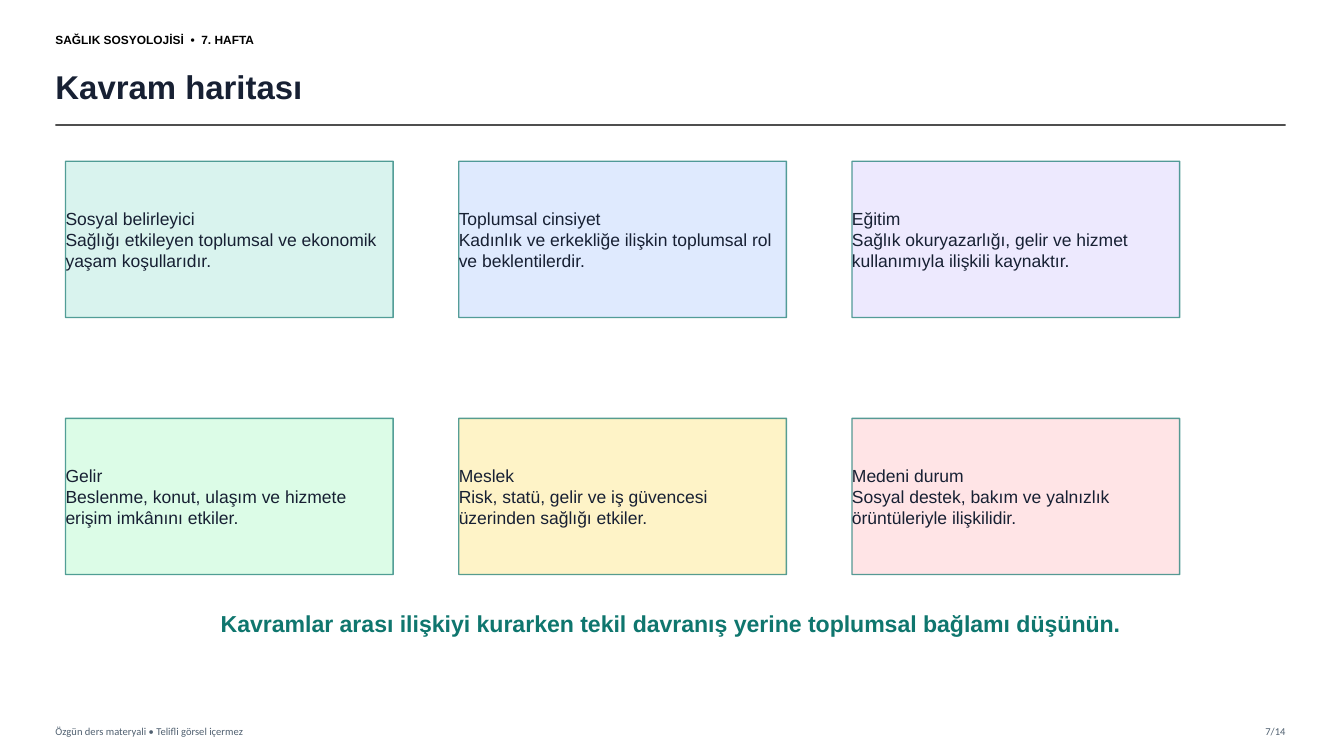
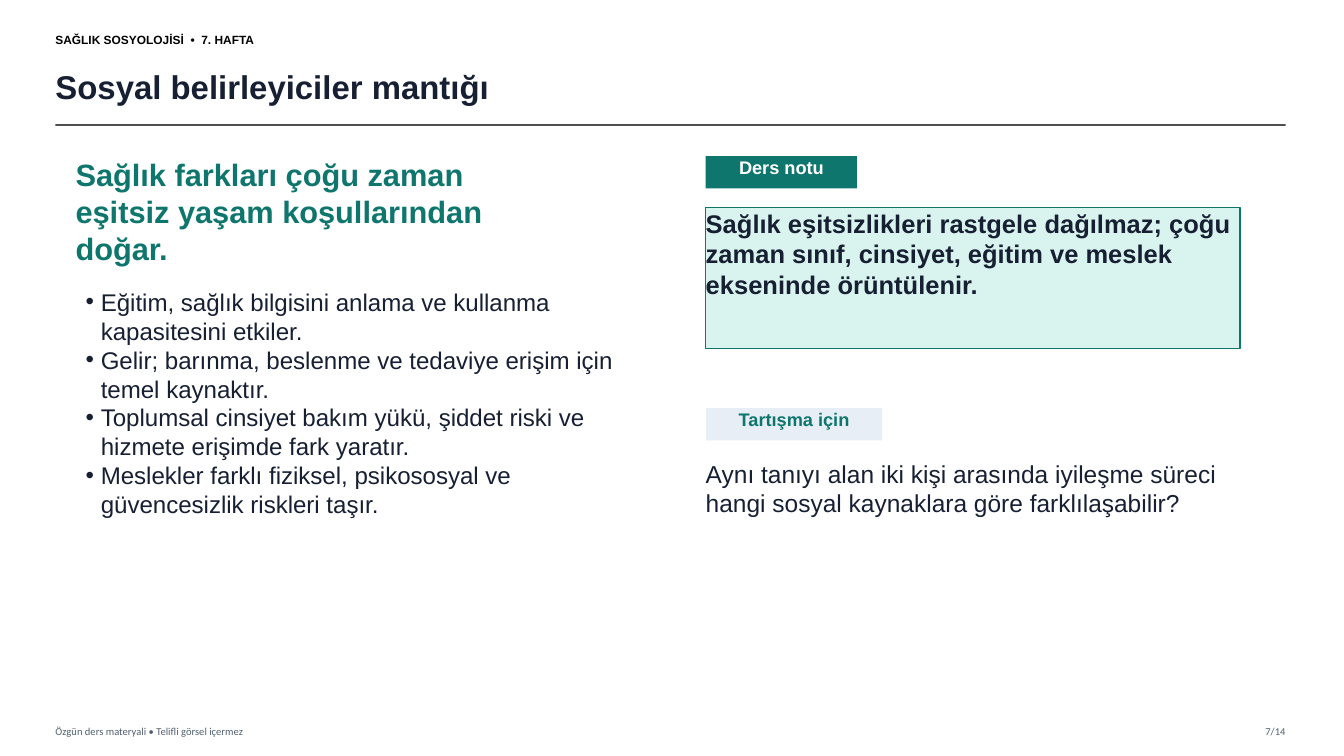
from lxml.etree import SubElement
from pptx import Presentation
from pptx.dml.color import RGBColor
from pptx.enum.shapes import MSO_CONNECTOR, MSO_SHAPE
from pptx.enum.text import MSO_ANCHOR as Anchor, PP_ALIGN as Align
from pptx.oxml.ns import qn
from pptx.util import Emu, Pt

PX = 9144  # 100 px to the inch
COLORS = {
    "ink": "172033", "black": "000000", "white": "FFFFFF", "teal": "0F766E",
    "rule": "333333", "footer": "506070", "mint": "D9F3EE", "blue": "DFEAFE",
    "violet": "EDE9FE", "green": "DCFCE7", "yellow": "FEF3C7", "rose": "FFE4E6",
    "mist": "E8EEF5",
}

COURSE = "SAĞLIK SOSYOLOJİSİ  •  7. HAFTA"
FOOTER = "Özgün ders materyali • Telifli görsel içermez"
PAGE = "7/14"

MAP_TITLE = "Kavram haritası"
CONCEPTS = [
    ("Sosyal belirleyici", "Sağlığı etkileyen toplumsal ve ekonomik yaşam koşullarıdır.", "mint"),
    ("Toplumsal cinsiyet", "Kadınlık ve erkekliğe ilişkin toplumsal rol ve beklentilerdir.", "blue"),
    ("Eğitim", "Sağlık okuryazarlığı, gelir ve hizmet kullanımıyla ilişkili kaynaktır.", "violet"),
    ("Gelir", "Beslenme, konut, ulaşım ve hizmete erişim imkânını etkiler.", "green"),
    ("Meslek", "Risk, statü, gelir ve iş güvencesi üzerinden sağlığı etkiler.", "yellow"),
    ("Medeni durum", "Sosyal destek, bakım ve yalnızlık örüntüleriyle ilişkilidir.", "rose"),
]
MAP_MESSAGE = "Kavramlar arası ilişkiyi kurarken tekil davranış yerine toplumsal bağlamı düşünün."

LOGIC_TITLE = "Sosyal belirleyiciler mantığı"
LOGIC_MESSAGE = "Sağlık farkları çoğu zaman eşitsiz yaşam koşullarından doğar."
LOGIC_POINTS = [
    "Eğitim, sağlık bilgisini anlama ve kullanma kapasitesini etkiler.",
    "Gelir; barınma, beslenme ve tedaviye erişim için temel kaynaktır.",
    "Toplumsal cinsiyet bakım yükü, şiddet riski ve hizmete erişimde fark yaratır.",
    "Meslekler farklı fiziksel, psikososyal ve güvencesizlik riskleri taşır.",
]
NOTE_LABEL = "Ders notu"
NOTE = ("Sağlık eşitsizlikleri rastgele dağılmaz; çoğu zaman sınıf, cinsiyet, "
        "eğitim ve meslek ekseninde örüntülenir.")
DISCUSSION_LABEL = "Tartışma için"
DISCUSSION = ("Aynı tanıyı alan iki kişi arasında iyileşme süreci hangi sosyal "
              "kaynaklara göre farklılaşabilir?")

LEFT, RIGHT = 55, 1275
CARD_COLUMNS, CARD_WIDTH, CARD_HEIGHT = 3, 325, 155
CARD_LEFT, CARD_TOP, CARD_STEP_X, CARD_STEP_Y = 65, 160, 390, 255
SIDE_LEFT, SIDE_WIDTH, LABEL_HEIGHT = 700, 530, 32
BULLET_INDENT = 15


def px(value):
    return Emu(value * PX)


def color(name):
    return RGBColor.from_string(COLORS[name])


def style_line(line, name, width, opacity=100):
    line.color.rgb = color(name)
    line.width = Pt(width)
    if opacity < 100:
        fill = line.fill._xPr.find(qn("a:solidFill"))
        SubElement(fill[0], qn("a:alpha"), val=str(opacity * 1000))


def add_bullet(paragraph):
    properties = paragraph._p.get_or_add_pPr()
    properties.set("marL", str(px(BULLET_INDENT)))
    properties.set("indent", str(-px(BULLET_INDENT)))
    SubElement(properties, qn("a:buFont"), typeface="Arial")
    SubElement(properties, qn("a:buChar"), char="•")


def write(shape, lines, size, ink="ink", bold=False, align=Align.LEFT,
          anchor=Anchor.TOP, font="Arial", bullets=False):
    frame = shape.text_frame
    frame.word_wrap = True
    frame.vertical_anchor = anchor
    frame.margin_left = frame.margin_top = frame.margin_right = frame.margin_bottom = 0
    for index, line in enumerate(lines):
        paragraph = frame.add_paragraph() if index else frame.paragraphs[0]
        paragraph.alignment = align
        if bullets:
            add_bullet(paragraph)
        run = paragraph.add_run()
        run.text = line
        run.font.name = font
        run.font.size = Pt(size)
        run.font.bold = bold
        run.font.color.rgb = color(ink)


def add_text(slide, box, *lines, **style):
    write(slide.shapes.add_textbox(*map(px, box)), lines, **style)


def add_panel(slide, box, fill, *lines, border_opacity=0, **style):
    """Add a filled rectangle with text; opacity 0 means no border."""
    panel = slide.shapes.add_shape(MSO_SHAPE.RECTANGLE, *map(px, box))
    panel.shadow.inherit = False
    panel.fill.solid()
    panel.fill.fore_color.rgb = color(fill)
    if border_opacity:
        style_line(panel.line, "teal", 1, border_opacity)
    else:
        panel.line.fill.background()
    write(panel, lines, **style)


def add_lesson_slide(presentation, title):
    """Add a blank slide with the shared header, rule and footer."""
    slide = presentation.slides.add_slide(presentation.slide_layouts[6])
    add_text(slide, (LEFT, 25, 360, 28), COURSE, size=8.5, ink="black", bold=True,
             anchor=Anchor.MIDDLE)
    add_text(slide, (LEFT, 58, 1195, 55), title, size=23.5, bold=True, anchor=Anchor.MIDDLE)
    rule = slide.shapes.add_connector(MSO_CONNECTOR.STRAIGHT, *map(px, (LEFT, 124, RIGHT, 124)))
    style_line(rule.line, "rule", 1.2, 85)
    SubElement(rule._element.spPr, qn("a:effectLst"))
    footer = {"size": 7.5, "ink": "footer", "font": "Calibri", "anchor": Anchor.MIDDLE}
    add_text(slide, (LEFT, 714, 600, 22), FOOTER, **footer)
    add_text(slide, (RIGHT - 65, 714, 65, 22), PAGE, align=Align.RIGHT, **footer)
    return slide


def build_concept_map(presentation):
    slide = add_lesson_slide(presentation, MAP_TITLE)
    for index, (name, meaning, fill) in enumerate(CONCEPTS):
        row, column = divmod(index, CARD_COLUMNS)
        box = (CARD_LEFT + column * CARD_STEP_X, CARD_TOP + row * CARD_STEP_Y,
               CARD_WIDTH, CARD_HEIGHT)
        add_panel(slide, box, fill, name, meaning, border_opacity=70, size=12.5,
                  anchor=Anchor.MIDDLE)
    add_text(slide, (100, 605, 1130, 45), MAP_MESSAGE, size=16.5, ink="teal", bold=True,
             align=Align.CENTER)


def build_logic(presentation):
    slide = add_lesson_slide(presentation, LOGIC_TITLE)
    add_text(slide, (75, 155, 460, 100), LOGIC_MESSAGE, size=22, ink="teal", bold=True)
    add_text(slide, (85, 285, 525, 270), *LOGIC_POINTS, size=17.2, bullets=True)
    label = {"size": 13, "bold": True, "align": Align.CENTER}
    add_panel(slide, (SIDE_LEFT, 155, 150, LABEL_HEIGHT), "teal", NOTE_LABEL,
              ink="white", **label)
    add_panel(slide, (SIDE_LEFT, 206, SIDE_WIDTH, 140), "mint", NOTE,
              border_opacity=100, size=18.2, bold=True)
    add_panel(slide, (SIDE_LEFT, 405, 175, LABEL_HEIGHT), "mist", DISCUSSION_LABEL,
              ink="teal", **label)
    add_text(slide, (SIDE_LEFT, 455, SIDE_WIDTH, 125), DISCUSSION, size=17.5)


def main():
    presentation = Presentation()
    presentation.slide_width, presentation.slide_height = px(1333), px(750)
    build_concept_map(presentation)
    build_logic(presentation)
    presentation.save("out.pptx")


if __name__ == "__main__":
    main()
